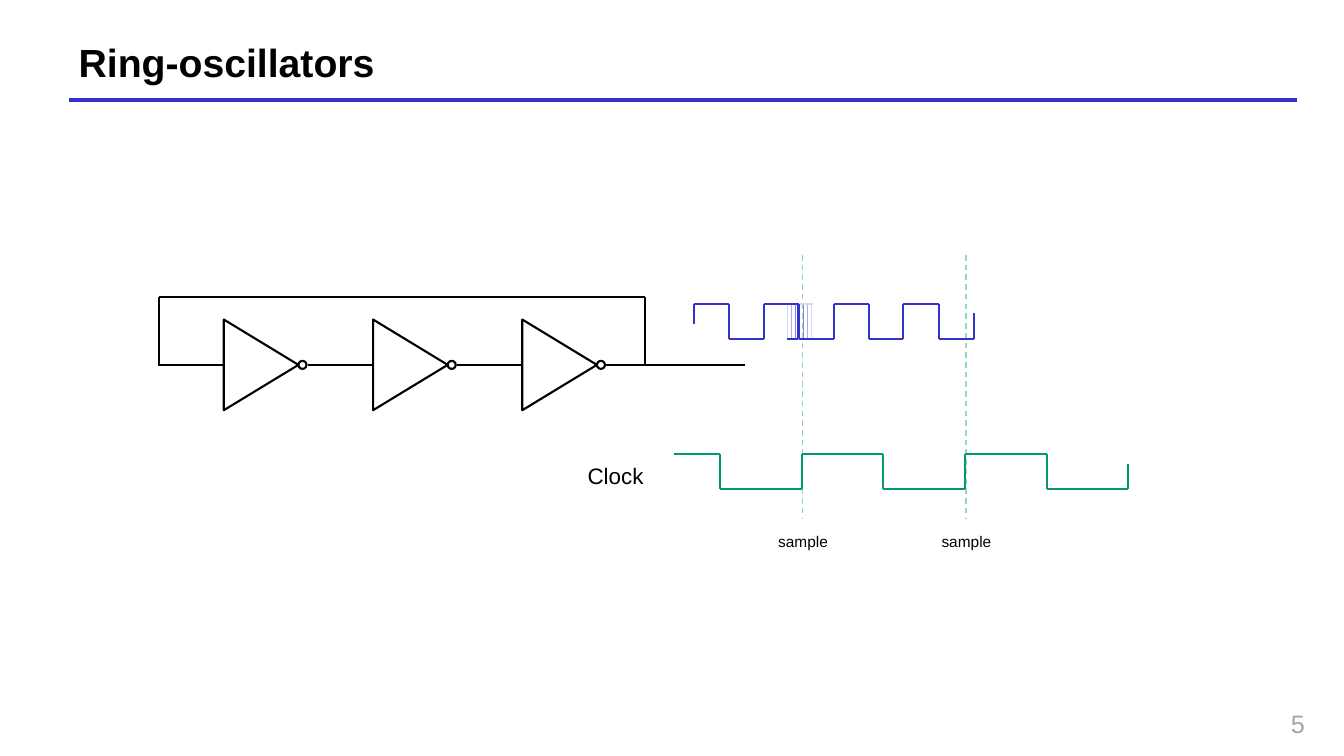
import itertools

import pptx
import pptx.dml.color
import pptx.enum.dml
import pptx.enum.shapes
import pptx.enum.text
import pptx.oxml.ns
import pptx.util
from lxml import etree

PX = 9144  # 100 px to the inch
BLACK, BLUE, GREEN = "000000", "3333CC", "009973"
DASH_GREEN, GREY = "94D9BA", "A6A6A6"
FADED = ("8585E0", "ADADEB", "D6D6F5")
ALIGN = pptx.enum.text.PP_ALIGN
SHAPE = pptx.enum.shapes.MSO_SHAPE


def px(n):
    return pptx.util.Emu(n * PX)


def rgb(color):
    return pptx.dml.color.RGBColor.from_string(color)


class Deck:
    font = "Arial"
    stroke = 1.5

    def __init__(self, prs):
        self.prs = prs
        self.s = prs.slides.add_slide(prs.slide_layouts[5])

    def style(self, p, size, color, bold=False, align=ALIGN.LEFT):
        p.alignment = align
        p.font.name = self.font
        p.font.size = pptx.util.Pt(size)
        p.font.bold = bold
        p.font.color.rgb = rgb(color)

    def title(self, text, x, y, w, h):
        sp = self.s.shapes.title
        sp.left, sp.top, sp.width, sp.height = map(px, (x, y, w, h))
        tf = sp.text_frame
        tf.text = text
        tf.vertical_anchor = pptx.enum.text.MSO_ANCHOR.MIDDLE
        self.style(tf.paragraphs[0], 28, BLACK, bold=True)

    def text(self, text, x, y, w, h, size, color=BLACK, align=ALIGN.LEFT):
        tf = self.s.shapes.add_textbox(*map(px, (x, y, w, h))).text_frame
        tf.word_wrap = True
        tf.text = text
        self.style(tf.paragraphs[0], size, color, align=align)

    def line(self, start, end, color=BLACK, width=stroke, dash=False):
        sp = self.s.shapes.add_connector(
            pptx.enum.shapes.MSO_CONNECTOR.STRAIGHT, *map(px, (*start, *end)))
        sp.line.color.rgb = rgb(color)
        sp.line.width = pptx.util.Pt(width)
        if dash:
            sp.line.dash_style = pptx.enum.dml.MSO_LINE.DASH
        etree.SubElement(sp._element.spPr, pptx.oxml.ns.qn("a:effectLst"))

    def trace(self, points, color=BLACK):
        for start, end in itertools.pairwise(points):
            self.line(start, end, color)

    def square_wave(self, lead, edges, high, low, end_y, color):
        """Trace alternating high and low levels between the edges."""
        points = list(lead)
        levels = itertools.cycle((high, low))
        for (x1, x2), y in zip(itertools.pairwise(edges), levels):
            points += [(x1, y), (x2, y)]
        self.trace(points + [(edges[-1], end_y)], color)

    def outline(self, kind, x, y, w, h, rotation=0):
        sp = self.s.shapes.add_shape(kind, *map(px, (x, y, w, h)))
        sp.rotation = rotation
        sp.shadow.inherit = False
        sp.fill.background()
        sp.line.color.rgb = rgb(BLACK)
        sp.line.width = pptx.util.Pt(self.stroke)
        return sp

    def inverter(self, x, y):
        """Input wire ends at x; y is the wire's height."""
        gate = self.outline(SHAPE.ISOSCELES_TRIANGLE, x - 8, y - 37, 90, 74, 90)
        bubble = self.outline(SHAPE.OVAL, x + 74, y - 4, 8, 8)
        self.s.shapes.add_group_shape([gate, bubble])
        self.line((x - 65, y), (x, y))


def main():
    prs = pptx.Presentation()
    prs.slide_width, prs.slide_height = px(1333), px(750)
    d = Deck(prs)

    # Header and page number
    d.line((68, 99), (1286, 99), BLUE, 3)
    d.title("Ring-oscillators", 68, 36, 1218, 50)
    d.text("5", 1026, 698, 278, 36, 18, GREY, ALIGN.RIGHT)

    # Sampling instants
    for x in (796, 958):
        d.line((x, 253), (x, 514), DASH_GREEN, 1, dash=True)
        d.text("sample", x - 34, 523, 83, 29, 11)

    # Ring of three inverters with feedback and output
    for x in (222, 370, 518):
        d.inverter(x, 362)
    d.line((600, 362), (739, 362))
    d.trace([(640, 362), (640, 295), (158, 295), (158, 362)])

    # Oscillator output
    edges = [round(688 + 34.75 * i) for i in range(9)]
    d.square_wave([(688, 321)], edges, 302, 336, 311, BLUE)

    # Jitter around the sampled edge
    d.line((793, 302), (806, 302), FADED[2])
    d.line((781, 336), (791, 336), BLUE)
    for i, color in enumerate(FADED, 1):
        for x in (793 - 4 * i, 793 + 4 * i):
            d.line((x, 303), (x, 335), color, 0.75)

    # Sampling clock
    edges = [668] + [714 + 81 * i for i in range(6)]
    d.square_wave([], edges, 450, 485, 460, GREEN)
    d.text("Clock", 573, 454, 83, 37, 16)

    prs.save("out.pptx")


if __name__ == "__main__":
    main()
